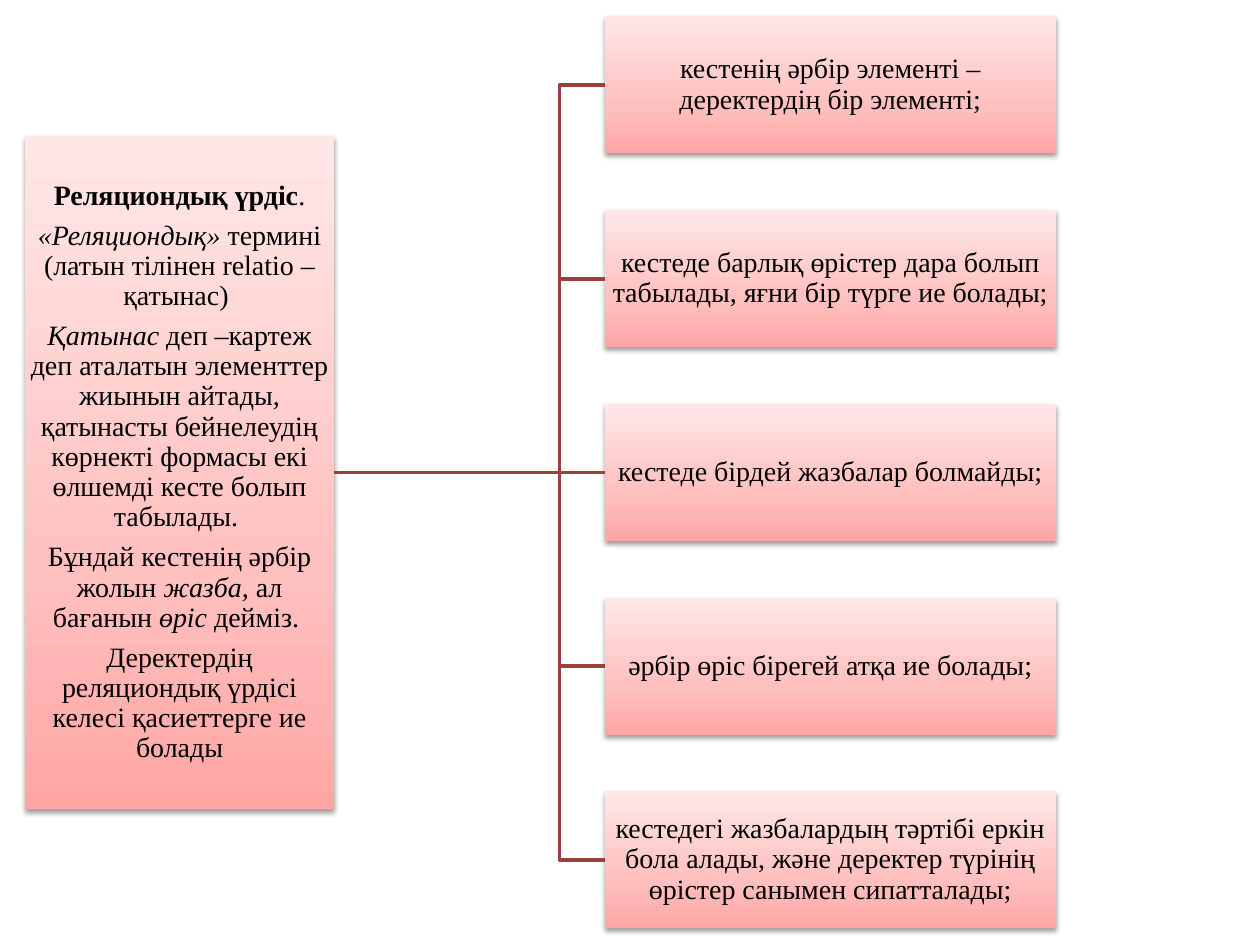
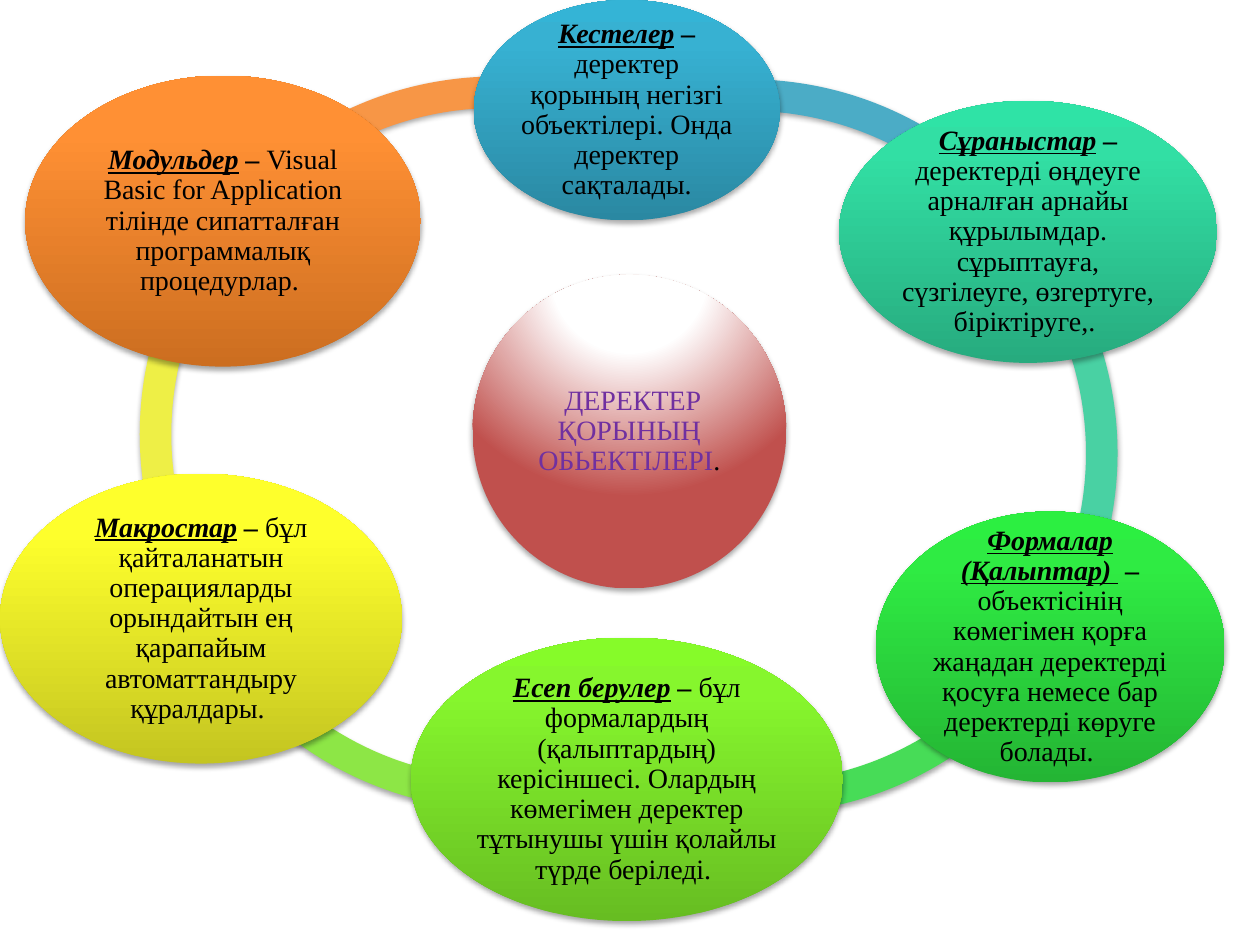
from lxml.etree import SubElement
from pptx import Presentation
from pptx.dml.color import RGBColor
from pptx.enum.shapes import MSO_CONNECTOR, MSO_SHAPE
from pptx.enum.text import MSO_ANCHOR, PP_ALIGN
from pptx.oxml.ns import qn
from pptx.util import Inches, Pt

FONT = "Times New Roman"
BLACK, PURPLE, BROWN = "000000", "7030A0", "9A403E"
PINK = [(0, "FFA6A5"), (35, "FFC0BF"), (100, "FFE7E7")]
SPHERE = [(0, "FFFFFF"), (35, "FFFFFF"), (100, "C0504D")]

presentation = Presentation()
presentation.slide_width = Inches(10)
presentation.slide_height = Inches(7.5)
column = presentation.slide_width / 100
row = presentation.slide_height / 100
blank_layout = presentation.slide_layouts[6]


def add_block(slide, kind, box, stops, shadow_alpha, radial=False):
    left, top, width, height = box
    shape = slide.shapes.add_shape(
        kind, round(left * column), round(top * row), round(width * column), round(height * row)
    )
    properties = shape._element.spPr
    if len(stops) == 1:
        shape.fill.solid()
        shape.fill.fore_color.rgb = RGBColor.from_string(stops[0][1])
    else:
        gradient = SubElement(properties, qn("a:gradFill"), rotWithShape="1")
        stop_list = SubElement(gradient, qn("a:gsLst"))
        for position, color in stops:
            stop = SubElement(stop_list, qn("a:gs"), pos=str(position * 1000))
            SubElement(stop, qn("a:srgbClr"), val=color)
        if radial:
            circle = SubElement(gradient, qn("a:path"), path="circle")
            SubElement(circle, qn("a:fillToRect"), l="50000", t="-80000", r="50000", b="180000")
        else:
            SubElement(gradient, qn("a:lin"), ang="16200000", scaled="0")
    shape.line.fill.background()
    effects = SubElement(properties, qn("a:effectLst"))
    shadow = SubElement(
        effects, qn("a:outerShdw"), blurRad="40000", dist="22000", dir="5400000", rotWithShape="0"
    )
    shadow_color = SubElement(shadow, qn("a:srgbClr"), val=BLACK)
    SubElement(shadow_color, qn("a:alpha"), val=str(shadow_alpha * 1000))
    return shape


def write(shape, paragraphs, inset):
    frame = shape.text_frame
    frame.word_wrap = True
    frame.vertical_anchor = MSO_ANCHOR.MIDDLE
    frame.margin_left = frame.margin_right = frame.margin_top = frame.margin_bottom = Inches(inset)
    for index, runs in enumerate(paragraphs):
        paragraph = frame.add_paragraph() if index else frame.paragraphs[0]
        paragraph.alignment = PP_ALIGN.CENTER
        paragraph.line_spacing = 0.9
        paragraph.space_after = Pt(5.6)
        paragraph.font.name = FONT
        paragraph.font.size = Pt(16)
        for text, style, color in runs:
            run = paragraph.add_run()
            run.text = text
            run.font.color.rgb = RGBColor.from_string(color)
            run.font.bold = "b" in style
            run.font.italic = "i" in style
            run.font.underline = "u" in style


slide = presentation.slides.add_slide(blank_layout)

relational_model = [
    [("Реляциондық үрдіс", "b", BLACK), (".", "", BLACK)],
    [("«Реляциондық» ", "i", BLACK), ("термині (латын тілінен relatio – қатынас) ", "", BLACK)],
    [
        ("Қатынас", "i", BLACK),
        (" деп –картеж деп аталатын элементтер жиынын айтады, қатынасты бейнелеудің "
         "көрнекті формасы екі өлшемді кесте болып табылады. ", "", BLACK),
    ],
    [
        ("Бұндай кестенің әрбір жолын ", "", BLACK),
        ("жазба, ", "i", BLACK),
        ("ал бағанын", "", BLACK),
        (" өріс ", "i", BLACK),
        ("дейміз. ", "", BLACK),
    ],
    [("Деректердің реляциондық үрдісі келесі қасиеттерге ие болады", "", BLACK)],
]
table_rules = [
    "кестенің әрбір элементі – деректердің бір элементі;",
    "кестеде барлық өрістер дара болып табылады, яғни бір түрге ие болады;",
    "кестеде бірдей жазбалар болмайды;",
    "әрбір өріс бірегей атқа ие болады;",
    "кестедегі жазбалардың тәртібі еркін бола алады, және деректер түрінің "
    "өрістер санымен сипатталады;",
]
model_left, model_width, model_height = 2, 24.5, 71.2
rule_left, rule_width, rule_height, rule_pitch = 48, 35.8, 14.5, 20.5
spine, middle = 44.4, 50

model_box = (model_left, middle - model_height / 2, model_width, model_height)
model_shape = add_block(slide, MSO_SHAPE.RECTANGLE, model_box, PINK, 38)
write(model_shape, relational_model, 0.01)

for index, rule in enumerate(table_rules):
    center = middle + (index - 2) * rule_pitch
    rule_box = (rule_left, center - rule_height / 2, rule_width, rule_height)
    rule_shape = add_block(slide, MSO_SHAPE.RECTANGLE, rule_box, PINK, 38)
    write(rule_shape, [[(rule, "", BLACK)]], 0.01)
    if center == middle:
        link = slide.shapes.add_connector(MSO_CONNECTOR.STRAIGHT, 0, 0, 0, 0)
        link.begin_connect(model_shape, 3)
        link.end_connect(rule_shape, 1)
        SubElement(link._element.spPr, qn("a:effectLst"))
    else:
        outline = slide.shapes.build_freeform(
            round((model_left + model_width) * column), round(middle * row)
        )
        corners = [(spine, middle), (spine, center), (rule_left, center)]
        outline.add_line_segments(
            [(round(x * column), round(y * row)) for x, y in corners], close=False
        )
        link = outline.convert_to_shape()
        link.fill.background()
        link.shadow.inherit = False
    link.line.color.rgb = RGBColor.from_string(BROWN)
    link.line.width = Pt(2)


slide = presentation.slides.add_slide(blank_layout)

ring_size = 55.6
ring_arcs = [
    (11.6, 8.1, 216.93, 292.41, "F79646"),
    (11.1, 8.9, 147.53, 218.7, "EEEF46"),
    (12.2, 11.6, 69, 152.31, "8DE646"),
    (32.5, 12, 32.36, 112.93, "47DC57"),
    (33.1, 10.9, 319.74, 34.44, "49D1A3"),
    (31.6, 8.4, 249.13, 324.73, "4BACC6"),
]
for left, top, start, end, color in ring_arcs:
    arc_box = (left, top, ring_size, ring_size * column / row)
    arc = add_block(slide, MSO_SHAPE.BLOCK_ARC, arc_box, [(0, color)], 35)
    arc.adjustments[0] = start * 0.6
    arc.adjustments[1] = end * 0.6
    arc.adjustments[2] = 0.045

hub = add_block(slide, MSO_SHAPE.OVAL, (37.5, 29.07, 24.9, 33.2), SPHERE, 35, radial=True)
write(hub, [[(" ДЕРЕКТЕР ҚОРЫНЫҢ ОБЬЕКТІЛЕРІ", "", PURPLE), (".", "", BLACK)]], 0.02)

database_objects = [
    ((37.6, 0, 24.3, 23.33), ("2A88A2", "37B1D2", "34B4D6"), "Кестелер", " – ",
     "деректер қорының негізгі объектілері. Онда деректер сақталады."),
    ((66.6, 10.67, 30, 27.73), ("27AB7E", "32DFA4", "2FE3A6"), "Сұраныстар", " – ",
     "деректерді өңдеуге арналған арнайы құрылымдар. сұрыптауға, сүзгілеуге, "
     "өзгертуге, біріктіруге,. "),
    ((69.5, 54.13, 27.7, 28.67), ("24B534", "2FEB43", "2CEF41"), "Формалар (Қалыптар) ", " –",
     " объектісінің көмегімен қорға жаңадан деректерді қосуға немесе бар "
     "деректерді көруге болады. "),
    ((32.6, 67.47, 34.3, 30), ("67BD22", "86F62D", "86FB29"), "Есеп берулер", " – ",
     "бұл формалардың (қалыптардың) керісіншесі. Олардың көмегімен деректер "
     "тұтынушы үшін қолайлы түрде беріледі. "),
    ((0, 50.13, 31.9, 30.67), ("C4C521", "FEFF2C", "FEFF2D"), "Макростар", " – ",
     "бұл қайталанатын операцияларды орындайтын ең қарапайым автоматтандыру құралдары. "),
    ((2, 8, 31.4, 30.8), ("CC6E20", "FF9034", "FF9136"), "Модульдер", " –",
     " Visual Basic for Application тілінде сипатталған программалық процедурлар. "),
]
for box, colors, name, dash, description in database_objects:
    oval = add_block(slide, MSO_SHAPE.OVAL, box, list(zip((0, 80, 100), colors)), 35)
    write(oval, [[(name, "biu", BLACK), (dash, "bi", BLACK), (description, "", BLACK)]], 0.02)

presentation.save("out.pptx")
